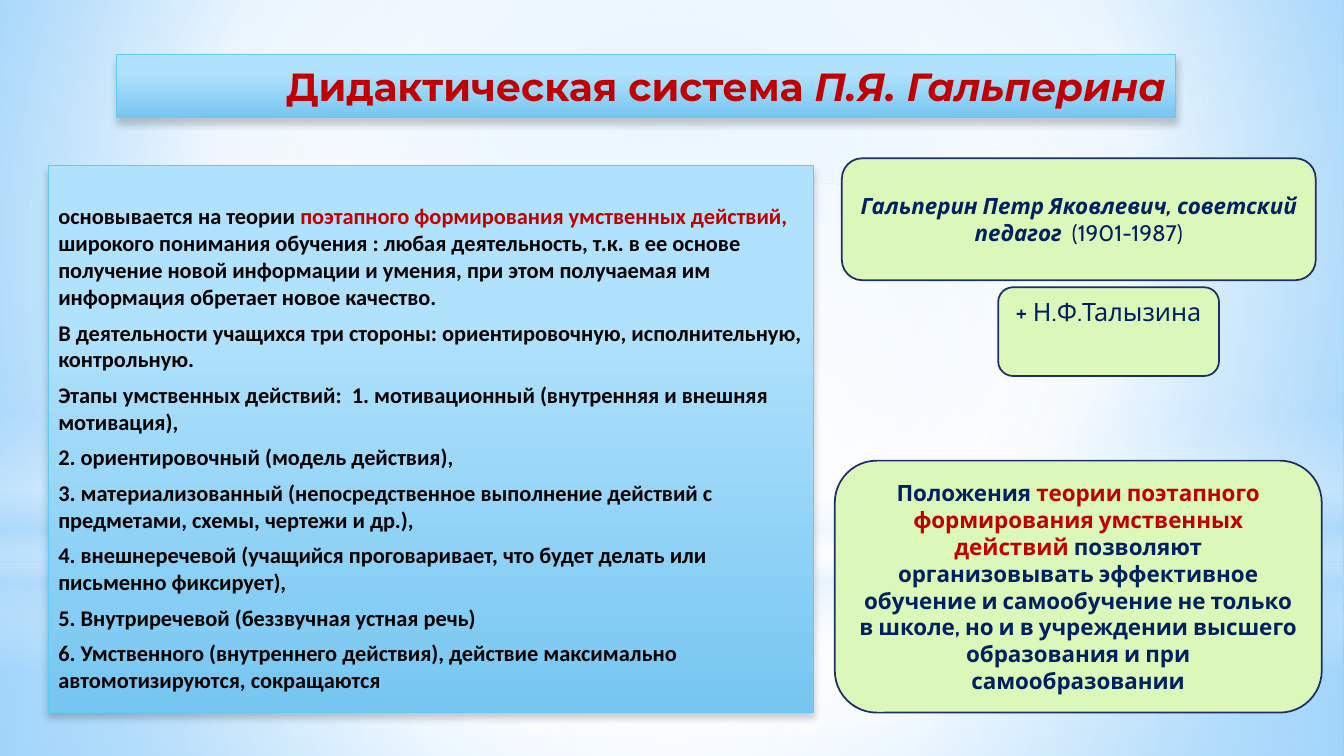
from dataclasses import dataclass

from lxml.etree import SubElement
from pptx import Presentation
from pptx.dml.color import RGBColor
from pptx.enum.shapes import MSO_SHAPE as SHAPE
from pptx.enum.text import MSO_ANCHOR as ANCHOR, PP_ALIGN as ALIGN
from pptx.oxml import parse_xml
from pptx.oxml.ns import nsdecls, qn
from pptx.util import Inches, Pt


@dataclass(frozen=True)
class Theme:
    """Colours, fonts and type sizes of the slide."""
    black: str = "000000"
    red: str = "C00000"
    navy: str = "002060"
    white: str = "FFFFFF"
    mist: str = "B4DCFA"
    green: str = "DCF7BA"
    green_line: str = "1F2E69"
    panel_line: str = "5ECCF3"
    panel: tuple = ((28, "B1E2FD", 100), (100, "76C6F1", 100))
    backdrop: tuple = ((0, "9ED5FF", 100), (60, "FFFFFF", 100), (100, "5BB9FF", 100))
    title_font: str = "Montserrat"
    body_font: str = "Calibri"
    card_font: str = "Cabin"
    title_size: int = 28
    name_size: int = 18
    text_size: int = 16


T = Theme()
CENTRE = (50, 50, 50, 50)

STEPS = (
    "В деятельности учащихся три стороны: ориентировочную, исполнительную, контрольную.",
    "Этапы умственных действий:  1. мотивационный (внутренняя и внешняя мотивация),",
    "2. ориентировочный (модель действия),",
    "3. материализованный (непосредственное выполнение действий с предметами, схемы, чертежи и др.),",
    "4. внешнеречевой (учащийся проговаривает, что будет делать или письменно фиксирует),",
    "5. Внутриречевой (беззвучная устная речь)",
    "6. Умственного (внутреннего действия), действие максимально автомотизируются, сокращаются",
)


def gradient(holder, stops, focus=None):
    """Swap the solid fill in holder for a vertical or circular gradient."""
    grad = parse_xml(f'<a:gradFill {nsdecls("a")} rotWithShape="1"><a:gsLst/></a:gradFill>')
    for position, colour, opacity in stops:
        stop = SubElement(grad[0], qn("a:gs"), pos=str(position * 1000))
        clr = SubElement(stop, qn("a:srgbClr"), val=colour)
        if opacity < 100:
            SubElement(clr, qn("a:alpha"), val=str(opacity * 1000))
    if focus:
        circle = SubElement(grad, qn("a:path"), path="circle")
        sides = {side: str(v * 1000) for side, v in zip("ltrb", focus)}
        SubElement(circle, qn("a:fillToRect"), **sides)
    else:
        SubElement(grad, qn("a:lin"), ang="5400000", scaled="0")
    solid = holder.find(qn("a:solidFill"))
    holder.replace(solid, grad)


def place(sp, box):
    """Set the position and size of a shape in inches."""
    sp.left, sp.top, sp.width, sp.height = map(Inches, box)


def outline(sp, colour, width):
    """Give a shape a plain line."""
    sp.line.color.rgb = RGBColor.from_string(colour)
    sp.line.width = Pt(width)


def glow(s, kind, box, stops, focus=None):
    """Add one translucent light area of the backdrop."""
    sp = s.shapes.add_shape(kind, *map(Inches, box))
    sp.shadow.inherit = False
    sp.line.fill.background()
    sp.fill.solid()
    gradient(sp._element.spPr, stops, focus)


def panel(sp):
    """Style a shape as a blue gradient panel with a soft shadow."""
    sp.fill.solid()
    gradient(sp._element.spPr, T.panel)
    outline(sp, T.panel_line, 0.75)
    sp.shadow.inherit = False
    effects = sp._element.spPr.find(qn("a:effectLst"))
    shadow = SubElement(effects, qn("a:outerShdw"), blurRad=str(Pt(5)), dist=str(Pt(4)),
                        dir="5400000", rotWithShape="0")
    clr = SubElement(shadow, qn("a:srgbClr"), val=T.black)
    SubElement(clr, qn("a:alpha"), val="20000")


def write(p, runs, font, size, align):
    """Fill a paragraph with (text, colour, bold, italic) runs."""
    p.alignment = align
    for text, colour, bold, italic in runs:
        r = p.add_run()
        r.text = text
        r.font.name, r.font.size = font, Pt(size)
        r.font.bold, r.font.italic = bold, italic
        r.font.color.rgb = RGBColor.from_string(colour)


def card(s, box, runs, size, anchor=ANCHOR.MIDDLE):
    """Add a rounded green card with centred text."""
    sp = s.shapes.add_shape(SHAPE.ROUNDED_RECTANGLE, *map(Inches, box))
    sp.shadow.inherit = False
    sp.fill.solid()
    sp.fill.fore_color.rgb = RGBColor.from_string(T.green)
    outline(sp, T.green_line, 1.25)
    tf = sp.text_frame
    tf.word_wrap, tf.vertical_anchor = True, anchor
    write(tf.paragraphs[0], runs, T.card_font, size, ALIGN.CENTER)


def backdrop(s):
    """Paint the background and its light areas."""
    s.background.fill.solid()
    gradient(s._element.find(".//" + qn("p:bgPr")), T.backdrop, (20, 10, 20, 60))
    w, m = T.white, T.mist
    glow(s, SHAPE.RECTANGLE, (0, 5.58, 13.33, 1.92),
         ((0, w, 91), (37, w, 76), (100, m, 79)), CENTRE)
    glow(s, SHAPE.RECTANGLE, (0, 0, 13.33, 5.58),
         ((0, w, 89), (48, w, 62), (100, m, 79)), CENTRE)
    glow(s, SHAPE.RECTANGLE, (0, 4.12, 13.33, 2.5),
         ((0, w, 0), (29, w, 30), (45, m, 40), (55, w, 26), (65, m, 60), (100, w, 0)))
    glow(s, SHAPE.OVAL, (0, 1.75, 13.33, 5.58), ((0, w, 100), (56, w, 0)), CENTRE)


def heading(s):
    """Format the title placeholder and bring it above the backdrop."""
    sp = s.shapes.title
    s.shapes._spTree.append(sp._element)
    place(sp, (1.16, 0.54, 10.5, 0.63))
    panel(sp)
    tf = sp.text_frame
    tf.vertical_anchor = ANCHOR.MIDDLE
    write(tf.paragraphs[0], (("Дидактическая система ", T.red, True, False),
                             ("П.Я. Гальперина", T.red, True, True)),
          T.title_font, T.title_size, ALIGN.RIGHT)


def theory(s):
    """Add the panel with the theory and its stages."""
    sp = s.shapes.add_shape(SHAPE.RECTANGLE, *map(Inches, (0.48, 1.64, 7.59, 5.43)))
    panel(sp)
    tf = sp.text_frame
    tf.word_wrap, tf.vertical_anchor = True, ANCHOR.TOP
    tf.margin_top = Inches(0.37)
    intro = (("основывается на теории ", T.black, True, False),
             ("поэтапного формирования умственных действий,", T.red, True, False),
             (" широкого понимания обучения : любая деятельность, т.к. в ее основе получение "
              "новой информации и умения, при этом получаемая им информация обретает новое "
              "качество.", T.black, True, False))
    for i, runs in enumerate([intro] + [((step, T.black, True, False),) for step in STEPS]):
        p = tf.add_paragraph() if i else tf.paragraphs[0]
        p.space_before, p.space_after = Pt(3.2), Pt(3)
        write(p, runs, T.body_font, T.text_size, ALIGN.LEFT)


def main():
    """Build the slide and save it."""
    prs = Presentation()
    prs.slide_width, prs.slide_height = Inches(13.33), Inches(7.5)
    s = prs.slides.add_slide(prs.slide_layouts[5])
    backdrop(s)
    heading(s)
    theory(s)
    card(s, (8.35, 1.57, 4.7, 1.21),
         (("Гальперин Петр Яковлевич, советский педагог  ", T.navy, True, True),
          ("(1901-1987)", T.navy, False, False)), T.text_size)
    card(s, (9.9, 2.85, 2.19, 0.88),
         (("+ Н.Ф.Талызина", T.navy, False, False),), T.name_size, ANCHOR.TOP)
    card(s, (8.28, 4.57, 4.83, 2.5),
         (("Положения ", T.navy, True, False),
          ("теории поэтапного формирования умственных действий", T.red, True, False),
          (" позволяют организовывать эффективное обучение и самообучение не только в школе, "
           "но и в учреждении высшего образования и при самообразовании", T.navy, True, False)),
         T.text_size)
    prs.save("out.pptx")


if __name__ == "__main__":
    main()
